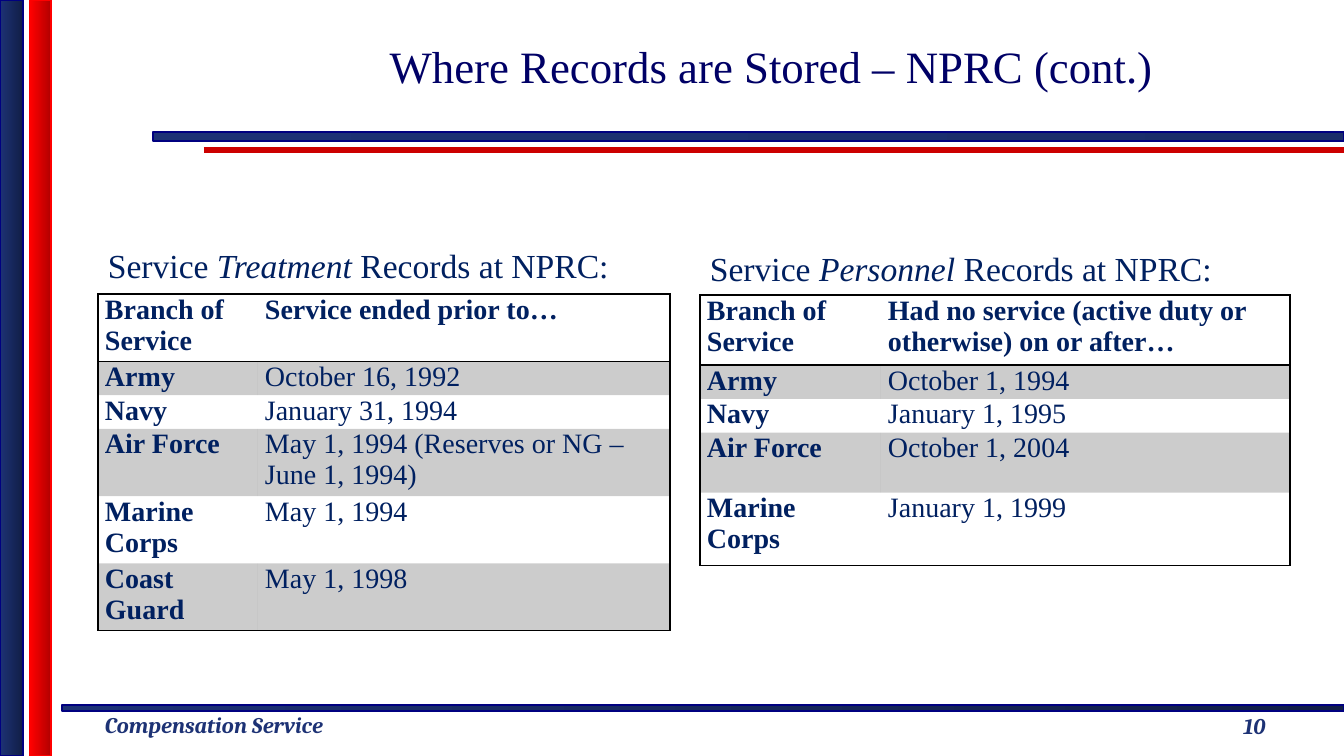
from dataclasses import dataclass

import pptx
import pptx.dml.color
import pptx.enum.dml
import pptx.enum.shapes
import pptx.enum.text
import pptx.oxml
import pptx.oxml.ns
import pptx.util

EMU_PER_PX = 12192000 / 1344
NO_STYLE = "{2D5ABB26-0587-4C30-8999-92F81FD0307C}"
ANCHOR = pptx.enum.text.MSO_ANCHOR
ALIGN = pptx.enum.text.PP_ALIGN


@dataclass(frozen=True)
class Theme:
    serif: str = "Times New Roman"
    footer_font: str = "Cambria"
    title: str = "000066"
    text: str = "002060"
    navy: str = "1D3275"
    navy_mid: str = "1A2D69"
    navy_dark: str = "111E46"
    navy_edge: str = "000080"
    red: str = "FF0000"
    red_dark: str = "B20000"
    red_line: str = "CC0000"
    black: str = "000000"
    title_size: int = 32
    heading_size: int = 24
    table_size: int = 20
    footer_size: int = 16


T = Theme()


@dataclass(frozen=True)
class Box:
    x: int
    y: int
    w: int
    h: int


@dataclass(frozen=True)
class Bar:
    box: Box
    start: str
    end: str
    edge: str


@dataclass(frozen=True)
class Style:
    size: int
    color: str
    font: str = T.serif
    bold: bool = False
    italic: bool = False


@dataclass(frozen=True)
class Label:
    box: Box
    runs: tuple[tuple[str, Style], ...]
    align: ALIGN = ALIGN.LEFT
    anchor: ANCHOR = ANCHOR.MIDDLE
    wrap: bool = True


@dataclass(frozen=True)
class RecordTable:
    x: int
    y: int
    cols: tuple[int, int]
    heights: tuple[int, ...]
    rows: tuple[tuple[str, str], ...]


TITLE = Style(T.title_size, T.title)
HEADING = Style(T.heading_size, T.text)
EMPHASIS = Style(T.heading_size, T.text, italic=True)
BODY = Style(T.table_size, T.text)
STRONG = Style(T.table_size, T.text, bold=True)
FOOTER = Style(T.footer_size, T.navy, T.footer_font, True, True)

BARS = (
    Bar(Box(62, 705, 1282, 6), T.navy, T.navy_dark, T.navy_edge),
    Bar(Box(153, 132, 1191, 9), T.navy, T.navy_mid, T.navy_edge),
    Bar(Box(0, 0, 23, 756), T.navy, T.navy_dark, T.navy_edge),
    Bar(Box(30, 0, 21, 756), T.red, T.red_dark, T.red),
)

LABELS = (
    Label(Box(95, 706, 284, 37), (("Compensation Service", FOOTER),),
          anchor=ANCHOR.TOP, wrap=False),
    Label(Box(236, 0, 1071, 132),
          (("Where Records are Stored – NPRC (cont.)", TITLE),), ALIGN.CENTER),
    Label(Box(1165, 701, 179, 50), (("10", FOOTER),), ALIGN.CENTER),
    Label(Box(98, 240, 557, 50),
          (("Service ", HEADING), ("Treatment ", EMPHASIS),
           ("Records at NPRC:", HEADING))),
    Label(Box(700, 243, 539, 50),
          (("Service ", HEADING), ("Personnel", EMPHASIS),
           (" Records at NPRC:", HEADING))),
)

TABLES = (
    RecordTable(98, 294, (160, 412), (67, 34, 33, 63, 62, 62), (
        ("Branch of Service", "Service ended prior to…"),
        ("Army", "October 16, 1992"),
        ("Navy", "January 31, 1994"),
        ("Air Force", "May 1, 1994 (Reserves or NG – June 1, 1994)"),
        ("Marine Corps", "May 1, 1994"),
        ("Coast Guard", "May 1, 1998"),
    )),
    RecordTable(700, 295, (181, 409), (70, 34, 33, 60, 73), (
        ("Branch of Service",
         "Had no service (active duty or otherwise) on or after…"),
        ("Army", "October 1, 1994"),
        ("Navy", "January 1, 1995"),
        ("Air Force", "October 1, 2004"),
        ("Marine Corps", "January 1, 1999"),
    )),
)


def px(n: int) -> pptx.util.Emu:
    return pptx.util.Emu(round(n * EMU_PER_PX))


def rgb(color: str) -> pptx.dml.color.RGBColor:
    return pptx.dml.color.RGBColor.from_string(color)


def place(box: Box) -> tuple[pptx.util.Emu, ...]:
    return px(box.x), px(box.y), px(box.w), px(box.h)


def add_run(p, text: str, style: Style) -> None:
    r = p.add_run()
    r.text = text
    r.font.name = style.font
    r.font.size = pptx.util.Pt(style.size)
    r.font.bold = style.bold
    r.font.italic = style.italic
    r.font.color.rgb = rgb(style.color)


def add_bar(s, bar: Bar) -> None:
    sp = s.shapes.add_shape(pptx.enum.shapes.MSO_SHAPE.RECTANGLE, *place(bar.box))
    sp.shadow.inherit = False
    sp.fill.gradient()
    sp.fill.gradient_angle = 0
    for stop, color, pos in zip(sp.fill.gradient_stops, (bar.start, bar.end), (0, 1)):
        stop.color.rgb = rgb(color)
        stop.position = pos
    sp.line.color.rgb = rgb(bar.edge)
    sp.line.width = pptx.util.Pt(1)


def add_rule(s, x1: int, x2: int, y: int) -> None:
    line = s.shapes.add_connector(
        pptx.enum.shapes.MSO_CONNECTOR.STRAIGHT, px(x1), px(y), px(x2), px(y))
    line.line.color.rgb = rgb(T.red_line)
    line.line.width = pptx.util.Pt(4)
    pptx.oxml.ns.qn("a:effectLst")
    line._element.spPr.append(
        line._element.makeelement(pptx.oxml.ns.qn("a:effectLst"), {}))


def add_label(s, label: Label) -> None:
    tf = s.shapes.add_textbox(*place(label.box)).text_frame
    tf.word_wrap = label.wrap
    tf.vertical_anchor = label.anchor
    p = tf.paragraphs[0]
    p.alignment = label.align
    for text, style in label.runs:
        add_run(p, text, style)


def set_borders(cell, sides: list[str]) -> None:
    tc_pr = cell._tc.get_or_add_tcPr()
    for i, side in enumerate(sides):
        tc_pr.insert(i, pptx.oxml.parse_xml(
            f'<a:ln{side} {pptx.oxml.ns.nsdecls("a")} w="12700"><a:solidFill>'
            f'<a:srgbClr val="{T.black}"/></a:solidFill></a:ln{side}>'))


def shade(cell) -> None:
    cell.fill.solid()
    cell.fill.fore_color.rgb = rgb(T.black)
    color = cell._tc.tcPr.find(".//" + pptx.oxml.ns.qn("a:srgbClr"))
    color.append(color.makeelement(pptx.oxml.ns.qn("a:alpha"), {"val": "20000"}))


def add_records(s, records: RecordTable) -> None:
    box = Box(records.x, records.y, sum(records.cols), sum(records.heights))
    table = s.shapes.add_table(len(records.rows), 2, *place(box)).table
    table.first_row = table.horz_banding = False
    table._tbl.tblPr.find(pptx.oxml.ns.qn("a:tableStyleId")).text = NO_STYLE
    for column, width in zip(table.columns, records.cols):
        column.width = px(width)
    last = len(records.rows) - 1
    for i, (row, height) in enumerate(zip(records.rows, records.heights)):
        table.rows[i].height = px(height)
        for j, text in enumerate(row):
            cell = table.cell(i, j)
            cell.margin_left = cell.margin_right = px(7)
            cell.margin_top = cell.margin_bottom = 0
            add_run(cell.text_frame.paragraphs[0], text,
                    STRONG if i == 0 or j == 0 else BODY)
            if i % 2:
                shade(cell)
            else:
                cell.fill.background()
            sides = ["R" if j else "L"]
            sides += ["T"] if i == 0 else []
            sides += ["B"] if i in (0, last) else []
            set_borders(cell, sides)


def main() -> None:
    prs = pptx.Presentation()
    prs.slide_width, prs.slide_height = px(1344), px(756)
    s = prs.slides.add_slide(prs.slide_layouts[6])
    add_rule(s, 204, 1344, 150)
    for bar in BARS:
        add_bar(s, bar)
    for label in LABELS:
        add_label(s, label)
    for records in TABLES:
        add_records(s, records)
    prs.save("out.pptx")


if __name__ == "__main__":
    main()
